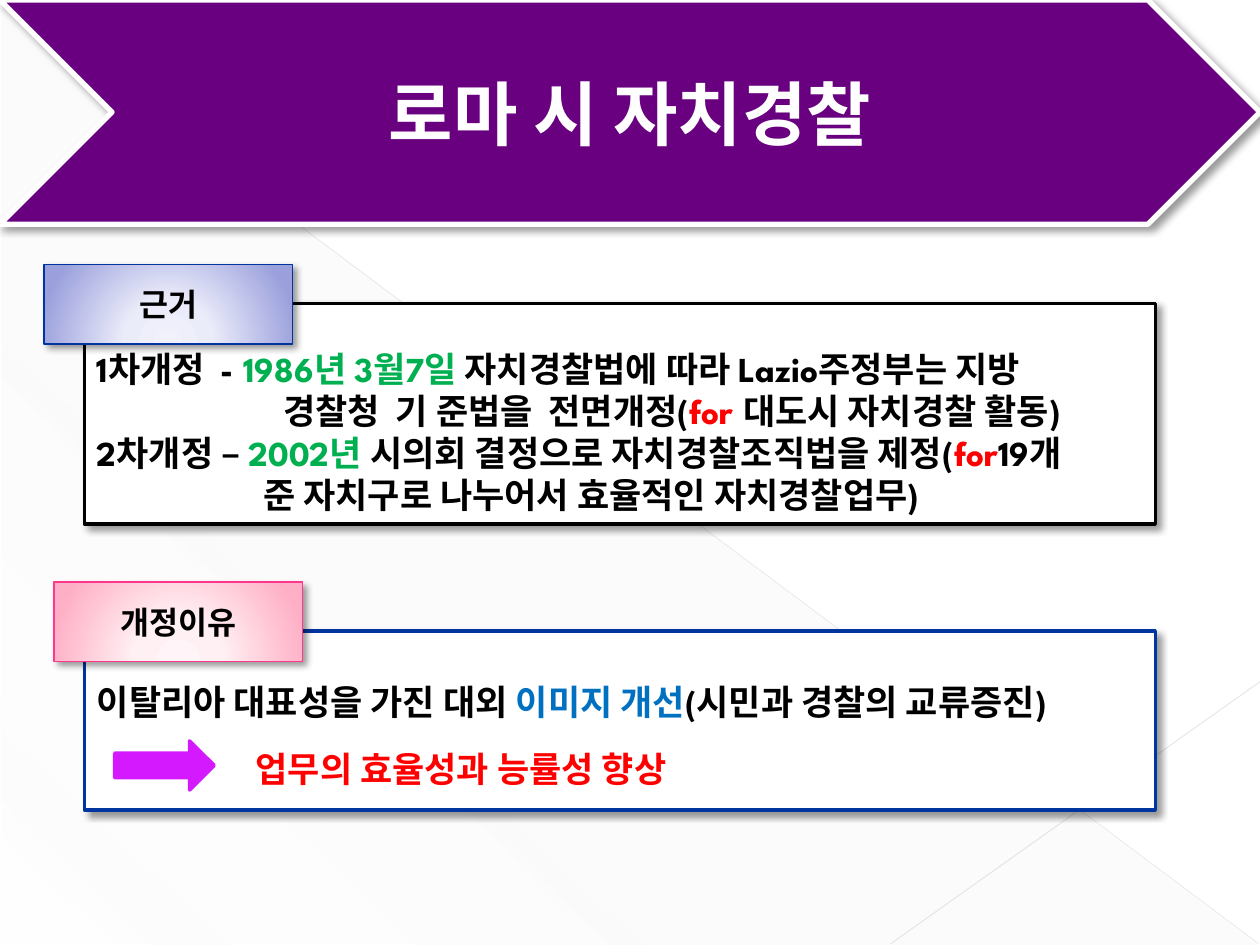
from lxml import etree
from pptx import Presentation
from pptx.dml.color import RGBColor
from pptx.enum.shapes import MSO_CONNECTOR, MSO_SHAPE
from pptx.enum.text import MSO_ANCHOR, PP_ALIGN
from pptx.oxml import parse_xml
from pptx.oxml.ns import nsdecls, qn
from pptx.util import Inches, Pt

RECT = MSO_SHAPE.RECTANGLE
CHEVRON = MSO_SHAPE.CHEVRON
ARROW = MSO_SHAPE.RIGHT_ARROW
TRIANGLE = MSO_SHAPE.RIGHT_TRIANGLE
STRAIGHT = MSO_CONNECTOR.STRAIGHT
TOP, MIDDLE = MSO_ANCHOR.TOP, MSO_ANCHOR.MIDDLE
LEFT, CENTER = PP_ALIGN.LEFT, PP_ALIGN.CENTER

BLACK, WHITE, RED, GREEN, BLUE = "000000", "FFFFFF", "FF0000", "00B050", "0070C0"
PURPLE, NAVY, PINK, MAGENTA = "68007F", "00349E", "FF388C", "D519FF"
CIRCLE = ('<a:path path="circle"><a:fillToRect l="50000" t="155000" '
          'r="50000" b="-55000"/></a:path>')
DIAGONAL = '<a:lin ang="7980000" scaled="0"/>'


def color(value):
    return RGBColor.from_string(value)


def set_gradient(shape, stops, direction):
    """Fill with stops of (position, colour, opacity), all in percent."""
    marks = "".join(
        f'<a:gs pos="{pos * 1000}"><a:srgbClr val="{value}">'
        f'<a:alpha val="{opacity * 1000}"/></a:srgbClr></a:gs>'
        for pos, value, opacity in stops)
    gradient = parse_xml(f'<a:gradFill {nsdecls("a")} rotWithShape="1">'
                         f'<a:gsLst>{marks}</a:gsLst>{direction}</a:gradFill>')
    shape.fill.solid()
    properties = shape._element.spPr
    properties.replace(properties.find(qn("a:solidFill")), gradient)


def add_shadow(shape):
    effects = shape._element.spPr.find(qn("a:effectLst"))
    effects.append(parse_xml(
        f'<a:outerShdw {nsdecls("a")} blurRad="{Pt(4)}" dist="{Pt(3)}" '
        'dir="2700000" algn="tl" rotWithShape="0"><a:srgbClr val="000000">'
        '<a:alpha val="40000"/></a:srgbClr></a:outerShdw>'))


def write_text(shape, paragraphs, size=20, ink=BLACK, font="League Spartan",
               align=LEFT, anchor=TOP, inset_top=0.05, inset_bottom=0.05):
    """Write paragraphs of (indent, [(text, colour or None), ...])."""
    frame = shape.text_frame
    frame.word_wrap = True
    frame.vertical_anchor = anchor
    frame.margin_top, frame.margin_bottom = Inches(inset_top), Inches(inset_bottom)
    for index, (indent, spans) in enumerate(paragraphs):
        para = frame.add_paragraph() if index else frame.paragraphs[0]
        para.alignment = align
        if indent:
            para._p.get_or_add_pPr().set("marL", str(Inches(indent)))
        for text, tint in spans:
            span = para.add_run()
            span.text = text
            span.font.name = font
            span.font.size = Pt(size)
            span.font.bold = True
            span.font.color.rgb = color(tint or ink)


class Page:
    def __init__(self, slide):
        self.shapes = slide.shapes

    def shape(self, kind, at, fill=None, line=None, width=2, shadow=True):
        shape = self.shapes.add_shape(kind, *map(Inches, at))
        if fill:
            shape.fill.solid()
            shape.fill.fore_color.rgb = color(fill)
        if line:
            shape.line.color.rgb = color(line)
            shape.line.width = Pt(width)
        else:
            shape.line.fill.background()
        shape.shadow.inherit = False
        if shadow:
            add_shadow(shape)
        return shape

    def line(self, start, end, tint, width, opacity):
        line = self.shapes.add_connector(STRAIGHT, *map(Inches, start + end))
        line.line.color.rgb = color(tint)
        line.line.width = Pt(width)
        properties = line._element.spPr
        tone = properties.find(".//" + qn("a:srgbClr"))
        etree.SubElement(tone, qn("a:alpha")).set("val", str(opacity * 1000))
        etree.SubElement(properties, qn("a:effectLst"))

    def panel(self, top, height, line, paragraphs, **style):
        panel = self.shape(RECT, (0.67, top, 8.5, height), WHITE, line)
        write_text(panel, paragraphs, **style)

    def label(self, left, top, text, line, tints):
        label = self.shape(RECT, (left, top, 1.97, 0.63), line=line, width=0.75)
        stops = [(pos, tint, 100) for pos, tint in zip((0, 34, 100), tints)]
        set_gradient(label, stops, CIRCLE)
        write_text(label, [(0, [(text, None)])], size=18, align=CENTER, anchor=MIDDLE)

    def text(self, at, text, **style):
        box = self.shapes.add_textbox(*map(Inches, at))
        write_text(box, [(0, [(text, None)])], **style)


def main():
    deck = Presentation()
    deck.slide_width, deck.slide_height = Inches(10), Inches(7.5)
    page = Page(deck.slides.add_slide(deck.slide_layouts[6]))

    backdrop = page.shape(TRIANGLE, (0.01, 0.02, 9.98, 7.48), shadow=False)
    set_gradient(backdrop, [(0, "D2D2D2", 10), (70, "D2D2D2", 8),
                            (100, "D2D2D2", 1)], DIAGONAL)
    page.line((0, 0.01), (9.99, 7.49), "BFBFBF", 0.39, 35)
    page.line((10, 5.41), (7.07, 7.49), "C6C6C6", 0.47, 45)

    banner = page.shape(CHEVRON, (0, 0, 10, 1.78), PURPLE, WHITE, 3)
    write_text(banner, [(0, [("로마 시 자치경찰", None)])], size=40, ink=WHITE,
               align=CENTER, anchor=MIDDLE)

    page.panel(2.41, 1.75, BLACK, [
        (0, [("1차개정  - ", None), ("1986년 3월7일 ", GREEN),
             ("자치경찰법에 따라 Lazio주정부는 지방", None)]),
        (1.48, [("경찰청  기 준법을  전면개정(", None), ("for ", RED),
                ("대도시 자치경찰 활동)", None)]),
        (0, [("2차개정 – ", None), ("2002년", GREEN),
             (" 시의회 결정으로 자치경찰조직법을 제정(", None),
             ("for", RED), ("19개", None)]),
        (1.32, [("준 자치구로 나누어서 효율적인 자치경찰업무)", None)]),
    ], inset_top=0.35)
    page.label(0.35, 2.1, "근거", NAVY, ("F0F1FB", "EBECF9", "9BA0DD"))

    page.panel(5.01, 1.42, NAVY, [
        (0, [("이탈리아 대표성을 가진 대외 ", None), ("이미지 개선", BLUE),
             ("(시민과 경찰의 교류증진)", None)]),
    ], anchor=MIDDLE, inset_bottom=0.35)
    page.shape(ARROW, (0.91, 5.88, 0.79, 0.39), MAGENTA, MAGENTA, shadow=False)
    page.text((1.93, 5.88, 6.69, 0.44), "업무의 효율성과 능률성 향상", ink=RED)
    page.label(0.43, 4.62, "개정이유", PINK, ("FFF4F7", "FFF0F3", "FFAFC5"))

    deck.save("out.pptx")


if __name__ == "__main__":
    main()
